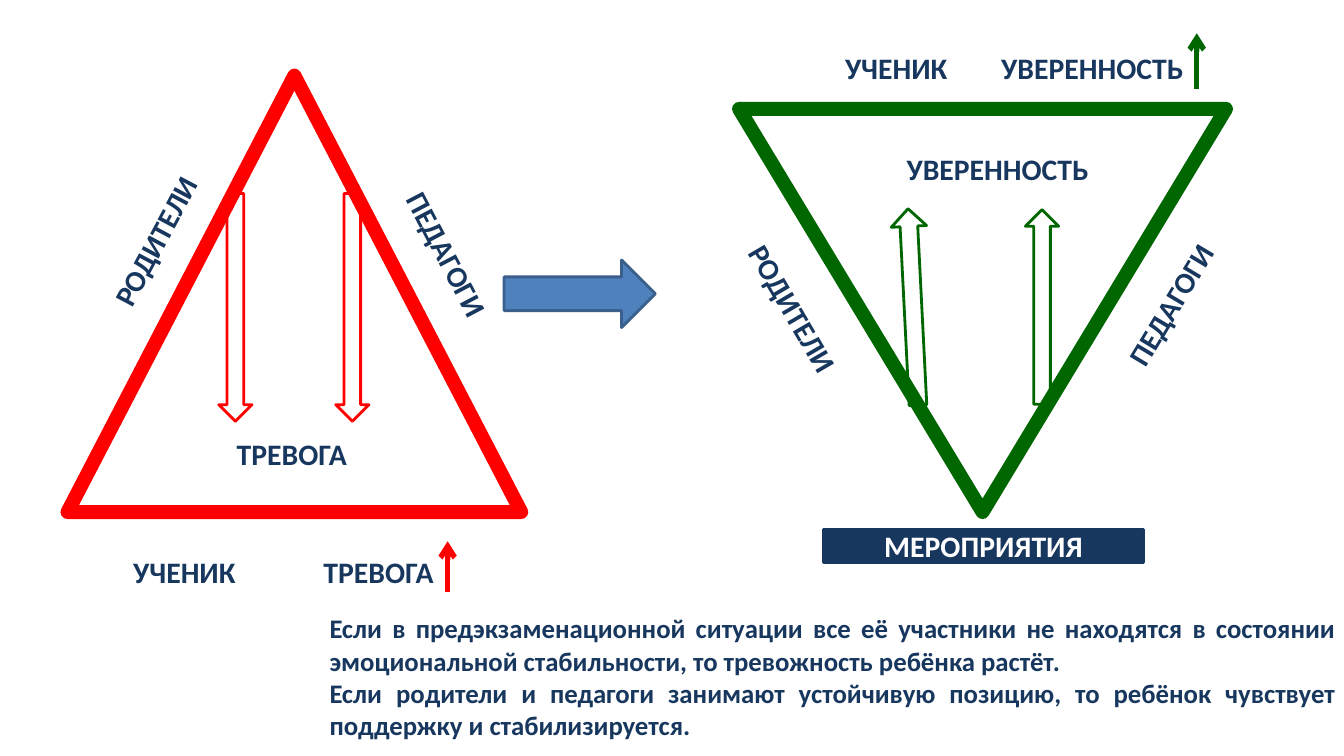
from lxml import etree
from pptx import Presentation
from pptx import util as u
from pptx.dml.color import RGBColor
from pptx.enum import shapes, text
from pptx.oxml import ns

COLORS = {"red": "FF0000", "green": "006600", "navy": "17375E",
          "white": "FFFFFF", "blue": "4F81BD", "edge": "3A5F8C"}
PX = u.Inches(1) // 100
KIND = shapes.MSO_SHAPE
ALIGN = text.PP_ALIGN


class Slide:
    """Holds the style and the slide being drawn, with lengths in px."""

    font = "Calibri"

    def __init__(self, prs):
        self.s = prs.slides.add_slide(prs.slide_layouts[6])

    def color(self, name):
        return RGBColor.from_string(COLORS[name])

    def add_text(self, sp, paragraphs, size, color, align):
        tf = sp.text_frame
        tf.word_wrap = True
        tf.vertical_anchor = text.MSO_ANCHOR.MIDDLE
        for i, words in enumerate(paragraphs):
            p = tf.paragraphs[0] if i == 0 else tf.add_paragraph()
            p.alignment = align
            r = p.add_run()
            r.text = words
            r.font.name = self.font
            r.font.size = u.Pt(size)
            r.font.bold = True
            r.font.color.rgb = self.color(color)

    def label(self, words, x, y, w, h=50, turn=0, size=21.2, align=ALIGN.CENTER):
        sp = self.s.shapes.add_textbox(x * PX, y * PX, w * PX, h * PX)
        sp.rotation = turn
        self.add_text(sp, words.split("\n"), size, "navy", align)

    def shape(self, kind, x, y, w, h, line, width=2, fill=None, turn=0, words=None):
        sp = self.s.shapes.add_shape(kind, x * PX, y * PX, w * PX, h * PX)
        sp.shadow.inherit = False
        sp.rotation = turn
        sp.line.color.rgb = self.color(line)
        sp.line.width = u.Pt(width)
        if fill:
            sp.fill.solid()
            sp.fill.fore_color.rgb = self.color(fill)
        else:
            sp.fill.background()
        if words:
            self.add_text(sp, [words], 21.2, "white", ALIGN.CENTER)

    def rise(self, x, bottom, top, color):
        c = self.s.shapes.add_connector(
            shapes.MSO_CONNECTOR.STRAIGHT, x * PX, bottom * PX, x * PX, top * PX)
        c.line.color.rgb = self.color(color)
        c.line.width = u.Pt(3.75)
        props = c._element.spPr
        etree.SubElement(props.get_or_add_ln(), ns.qn("a:tailEnd"), type="arrow")
        etree.SubElement(props, ns.qn("a:effectLst"))


def main():
    prs = Presentation()
    prs.slide_width, prs.slide_height = 1333 * PX, 750 * PX
    s = Slide(prs)

    s.shape(KIND.ISOSCELES_TRIANGLE, 67, 75, 450, 433, "red", 10)
    s.label("УЧЕНИК", 83, 542, 200)
    s.label("РОДИТЕЛИ", -19, 214, 345, turn=298)
    s.label("ПЕДАГОГИ", 271, 227, 345, turn=62.3)
    for x in (217, 333):
        s.shape(KIND.DOWN_ARROW, x, 192, 33, 226, "red")
    s.label("ТРЕВОГА", 117, 425, 345)
    s.label("ТРЕВОГА", 267, 542, 217)
    s.rise(444, 587, 537, "red")

    s.shape(KIND.RIGHT_ARROW, 500, 258, 150, 67, "edge", fill="blue")

    s.shape(KIND.ISOSCELES_TRIANGLE, 733, 108, 483, 400, "green", 10, turn=180)
    s.shape(KIND.RECTANGLE, 817, 525, 317, 33, "navy", fill="navy", words="МЕРОПРИЯТИЯ")
    s.label("УЧЕНИК", 783, 42, 212)
    s.label("РОДИТЕЛИ", 614, 281, 345, turn=59.7)
    s.label("ПЕДАГОГИ", 988, 277, 345, turn=301)
    s.shape(KIND.DOWN_ARROW, 888, 207, 35, 195, "green", turn=177.1)
    s.shape(KIND.DOWN_ARROW, 1017, 208, 33, 193, "green", turn=180)
    s.label("УВЕРЕННОСТЬ", 817, 142, 345)
    s.label("УВЕРЕННОСТЬ", 967, 42, 233)
    s.rise(1187, 88, 33, "green")

    s.label("Если в предэкзаменационной ситуации все её участники не находятся "
            "в состоянии эмоциональной стабильности, то тревожность ребёнка растёт.\n"
            "Если родители и педагоги занимают устойчивую позицию, то ребёнок "
            "чувствует поддержку и стабилизируется.",
            317, 592, 1017, 158, size=19.1, align=ALIGN.JUSTIFY)

    prs.save("out.pptx")


if __name__ == "__main__":
    main()
